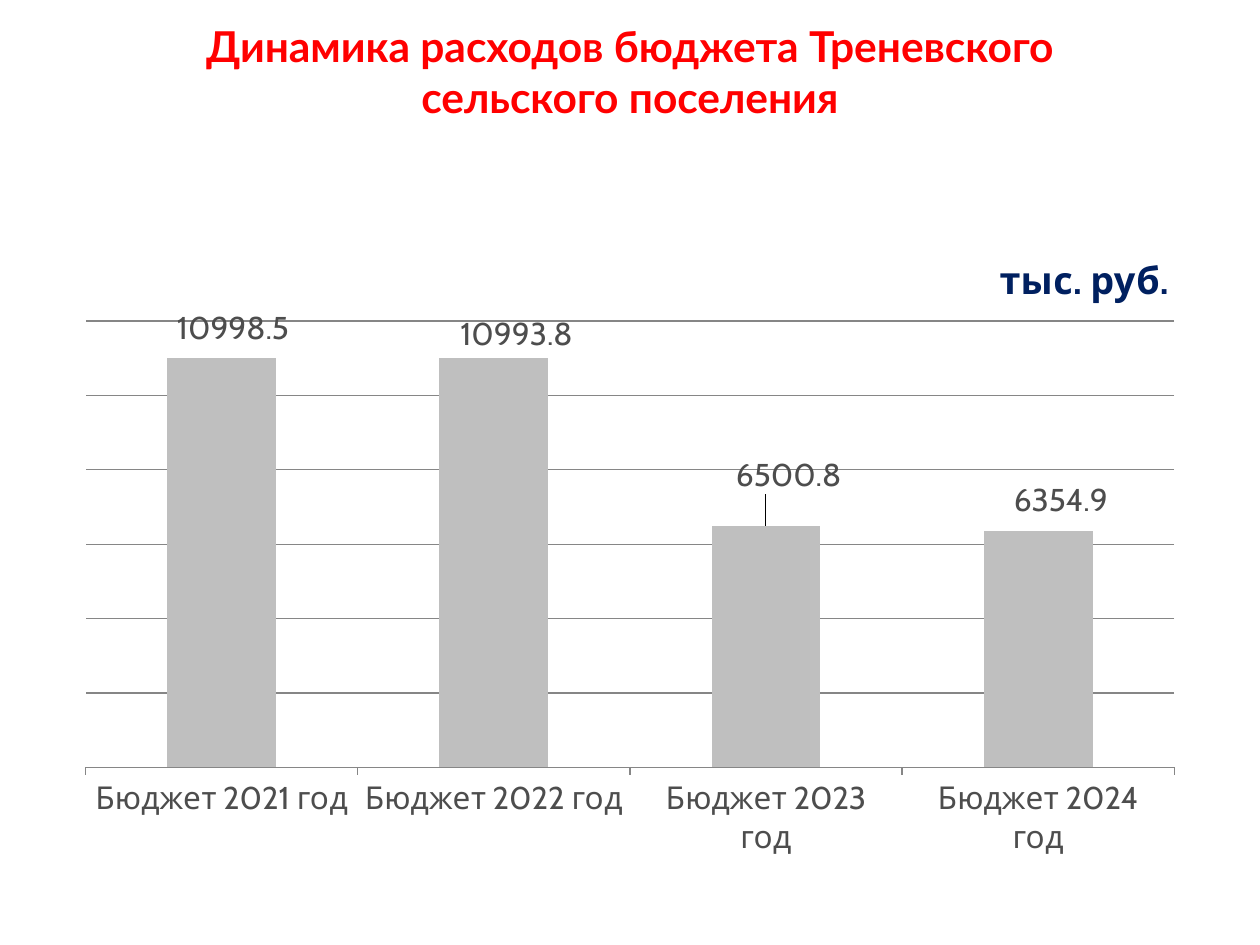
from lxml import etree
from pptx import Presentation
from pptx.chart.data import CategoryChartData
from pptx.dml.color import RGBColor
from pptx.enum.chart import XL_CHART_TYPE, XL_LABEL_POSITION, XL_TICK_LABEL_POSITION, XL_TICK_MARK
from pptx.enum.text import MSO_ANCHOR, PP_ALIGN
from pptx.oxml.ns import qn
from pptx.util import Inches, Pt

COLUMNS = XL_CHART_TYPE.COLUMN_CLUSTERED
OUTSIDE_END = XL_LABEL_POSITION.OUTSIDE_END
LOW = XL_TICK_LABEL_POSITION.LOW
TICK_OUT = XL_TICK_MARK.OUTSIDE
MIDDLE = MSO_ANCHOR.MIDDLE
CENTER = PP_ALIGN.CENTER
color = RGBColor.from_string


def write_text(frame, text, *, size, font, fill, bold=False):
    para = frame.paragraphs[0]
    para.alignment = CENTER
    span = para.add_run()
    span.text = text
    span.font.size = Pt(size)
    span.font.name = font
    span.font.bold = bold
    span.font.color.rgb = color(fill)


def set_layout(parent, index, **values):
    """Give a chart part a manual layout in fractions of the chart."""
    for old in parent.findall(qn("c:layout")):
        parent.remove(old)
    layout = etree.Element(qn("c:layout"))
    manual = etree.SubElement(layout, qn("c:manualLayout"))
    for name, value in values.items():
        etree.SubElement(manual, qn("c:" + name)).set("val", str(value))
    parent.insert(index, layout)


deck = Presentation()
deck.slide_width, deck.slide_height = Inches(10), Inches(7.5)
page = deck.slides.add_slide(deck.slide_layouts[5])

# Title
title = page.shapes.title
title.left, title.top = Inches(1), Inches(0.17)
title.width, title.height = Inches(8), Inches(0.78)
title.text_frame.vertical_anchor = MIDDLE
title.text_frame.word_wrap = True
write_text(title.text_frame, "Динамика расходов бюджета Треневского сельского поселения",
           size=24.3, font="Lato", fill="FF0000", bold=True)

# Expenditure chart
budget = CategoryChartData()
budget.categories = [f"Бюджет {year} год" for year in range(2021, 2025)]
budget.add_series("Series 1", (10998.5, 10993.8, 6500.8, 6354.9))
chart = page.shapes.add_chart(COLUMNS, Inches(0.5), Inches(1.75),
                              Inches(9), Inches(5.15), budget).chart
chart.has_legend = False
chart.font.size = Pt(18)
chart.font.name = "Cabin"
chart.font.color.rgb = color("4D4D4D")
set_layout(chart._chartSpace.chart.plotArea, 0, layoutTarget="inner",
           xMode="edge", yMode="edge", x=0.02, y=0.155, w=0.96, h=0.688)

# Unit caption
chart.has_title = True
write_text(chart.chart_title.text_frame, "тыс. руб.",
           size=21.6, font="Cabin", fill="002060", bold=True)
set_layout(chart.chart_title._element, 1, xMode="edge", yMode="edge", x=0.82, y=0.04)

# Axes and gridlines
values = chart.value_axis
values.visible = False
values.minimum_scale, values.maximum_scale, values.major_unit = 0, 12000, 2000
values.has_major_gridlines = True
years = chart.category_axis
years.major_tick_mark = TICK_OUT
years.tick_label_position = LOW
for line in (values.major_gridlines.format.line, years.format.line):
    line.color.rgb = color("868686")
    line.width = Pt(0.75)

# Columns
plot = chart.plots[0]
plot.gap_width = 150
plot.vary_by_categories = False
series = plot.series[0]
series.format.fill.solid()
series.format.fill.fore_color.rgb = color("BFBFBF")

# Value labels, each nudged from the top of its column
series.data_labels.show_value = True
series.data_labels.position = OUTSIDE_END
offsets = [(0.01, -0.01), (0.02, 0), (0.02, -0.04), (0.02, -0.01)]
for index in range(len(offsets)):
    series.points[index].data_label.position = OUTSIDE_END
for label, (x, y) in zip(series._element.iter(qn("c:dLbl")), offsets):
    set_layout(label, 1, x=x, y=y)

deck.save("out.pptx")
